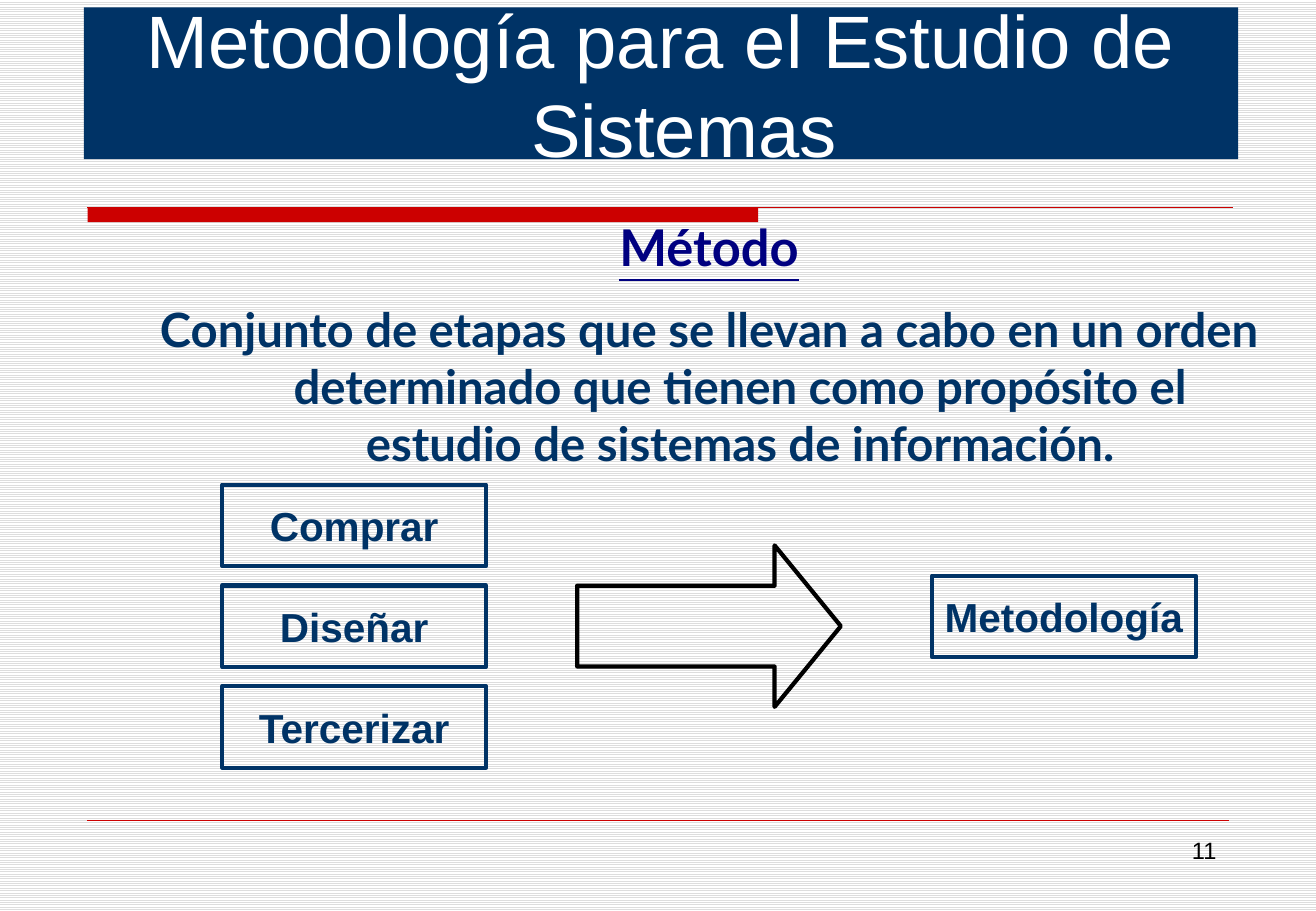
from lxml import etree
from pptx import Presentation
from pptx.dml.color import RGBColor
from pptx.enum.dml import MSO_PATTERN
from pptx.enum.shapes import MSO_CONNECTOR, MSO_SHAPE
from pptx.enum.text import MSO_ANCHOR, MSO_AUTO_SIZE, PP_ALIGN
from pptx.oxml.ns import qn
from pptx.util import Inches, Pt

STRIPES = MSO_PATTERN.LIGHT_HORIZONTAL
STRAIGHT = MSO_CONNECTOR.STRAIGHT
RECTANGLE = MSO_SHAPE.RECTANGLE
PROCESS = MSO_SHAPE.FLOWCHART_PROCESS
RIGHT_ARROW = MSO_SHAPE.RIGHT_ARROW
TOP, MIDDLE = MSO_ANCHOR.TOP, MSO_ANCHOR.MIDDLE
NO_AUTOFIT = MSO_AUTO_SIZE.NONE
CENTER, RIGHT = PP_ALIGN.CENTER, PP_ALIGN.RIGHT

COLORS = {
    "navy": "003366",
    "heading": "000080",
    "red": "CC0000",
    "stripe": "DDDDDD",
    "white": "FFFFFF",
    "black": "000000",
}
STEPS = ["Comprar", "Diseñar", "Tercerizar"]
DEFINITION = (
    "Conjunto de etapas que se llevan a cabo en un orden determinado "
    "que tienen como propósito el estudio de sistemas de información."
)


def color(name):
    return RGBColor.from_string(COLORS[name])


def place(shape, left, top, width, height):
    shape.left, shape.top = Inches(left), Inches(top)
    shape.width, shape.height = Inches(width), Inches(height)


def write(paragraph, text, size, color_name, font="Arial", bold=False,
          align=CENTER, hanging=0.38):
    paragraph.text = text
    paragraph.alignment = align
    properties = paragraph._p.get_or_add_pPr()
    properties.set("marL", str(Inches(hanging)))
    properties.set("indent", str(-Inches(hanging)))
    etree.SubElement(properties, qn("a:buNone"))
    paragraph.font.name = font
    paragraph.font.size = Pt(size)
    paragraph.font.bold = bold
    paragraph.font.color.rgb = color(color_name)


def add_rule(slide, left, top, width, weight):
    rule = slide.shapes.add_connector(
        STRAIGHT, Inches(left), Inches(top), Inches(left + width), Inches(top))
    rule.line.color.rgb = color("red")
    rule.line.width = Pt(weight)
    etree.SubElement(rule._element.spPr, qn("a:effectLst"))


def add_outline(slide, kind, left, top, width, height, line_color):
    shape = slide.shapes.add_shape(
        kind, Inches(left), Inches(top), Inches(width), Inches(height))
    shape.shadow.inherit = False
    shape.fill.background()
    shape.line.color.rgb = color(line_color)
    shape.line.width = Pt(2.5)
    return shape


def add_process(slide, text, left, top, width, height):
    shape = add_outline(slide, PROCESS, left, top, width, height, "navy")
    frame = shape.text_frame
    frame.word_wrap = False
    frame.vertical_anchor = MIDDLE
    write(frame.paragraphs[0], text, 24, "navy", bold=True)


def fill_title(slide, left, top, width, height):
    title = slide.shapes.title
    place(title, left, top, width, height)
    title.fill.solid()
    title.fill.fore_color.rgb = color("navy")
    frame = title.text_frame
    frame.auto_size = NO_AUTOFIT
    frame.vertical_anchor = MIDDLE
    write(frame.paragraphs[0], "Metodología para el Estudio de Sistemas",
          44, "white")


def fill_body(slide, left, top, width, height):
    body = slide.placeholders[1]
    place(body, left, top, width, height)
    frame = body.text_frame
    frame.auto_size = NO_AUTOFIT
    frame.vertical_anchor = TOP
    heading = frame.paragraphs[0]
    write(heading, "Método", 30, "heading", "Lato", True, hanging=0.51)
    heading.space_before = Pt(0)
    heading.font.underline = True
    definition = frame.add_paragraph()
    write(definition, DEFINITION, 28, "navy", "Lato", True, hanging=0.51)
    definition.space_before = Pt(14)


def add_divider(slide, left, top, width, height):
    bar = slide.shapes.add_shape(
        RECTANGLE, Inches(left), Inches(top), Inches(5.52), Inches(height))
    bar.shadow.inherit = False
    bar.fill.solid()
    bar.fill.fore_color.rgb = color("red")
    bar.line.fill.background()
    add_rule(slide, left, top, width, 0.75)


def add_diagram(slide, left, top):
    width, height, pitch = 2.17, 0.67, 0.83
    for index, step in enumerate(STEPS):
        add_process(slide, step, left, top + index * pitch, width, height)
    arrow = add_outline(slide, RIGHT_ARROW, left + 2.92, top + 0.5,
                        width, 1.33, "black")
    arrow.adjustments[0] = 0.5
    arrow.adjustments[1] = 0.41
    add_process(slide, "Metodología", left + 5.84, top + 0.75, width, height)


def add_footer(slide, left, top, width):
    add_rule(slide, left, top, width, 0.25)
    number_width = 2.35
    number = slide.shapes.add_textbox(
        Inches(left + width - number_width), Inches(top + 0.08),
        Inches(number_width), Inches(0.52))
    number.text_frame.word_wrap = True
    write(number.text_frame.paragraphs[0], "11", 14, "black", align=RIGHT)


def main():
    presentation = Presentation()
    presentation.slide_width = Inches(10.83)
    presentation.slide_height = Inches(7.5)
    slide = presentation.slides.add_slide(presentation.slide_layouts[1])
    background = slide.background.fill
    background.patterned()
    background.pattern = STRIPES
    background.fore_color.rgb = color("stripe")
    background.back_color.rgb = color("white")
    add_divider(slide, 0.72, 1.71, 9.43, 0.12)
    fill_body(slide, 1.17, 1.73, 9.33, 2.33)
    add_diagram(slide, 1.83, 3.99)
    add_footer(slide, 0.72, 6.75, 9.39)
    fill_title(slide, 0.69, 0.06, 9.5, 1.25)
    presentation.save("out.pptx")


if __name__ == "__main__":
    main()
